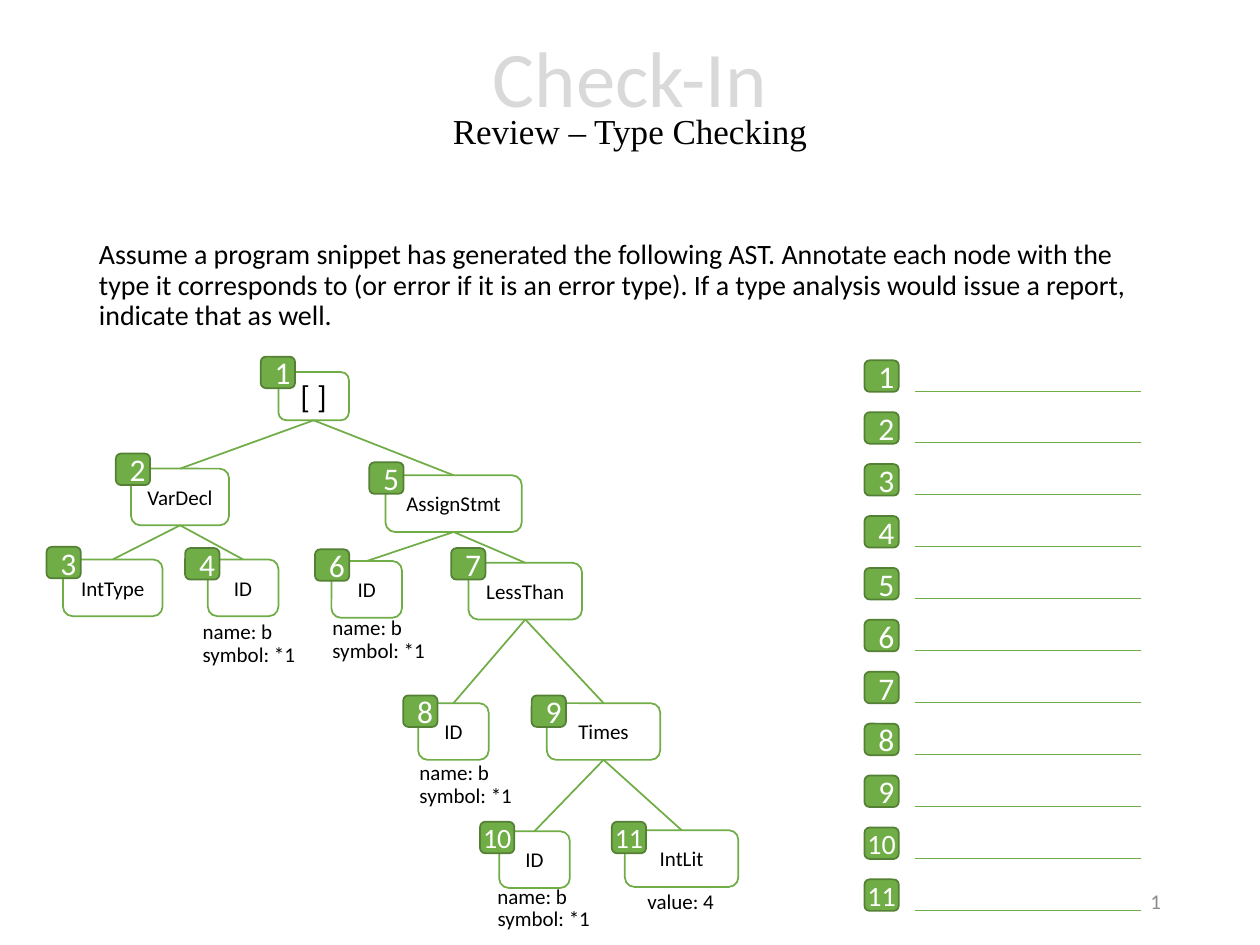
"""Build the type-checking check-in slide: a numbered AST and its answer list."""
from pptx import Presentation
from pptx.dml.color import RGBColor
from pptx.enum.shapes import MSO_CONNECTOR, MSO_SHAPE
from pptx.enum.text import MSO_ANCHOR, MSO_AUTO_SIZE, PP_ALIGN
from pptx.oxml.ns import qn
from pptx.util import Pt
from lxml.etree import SubElement

GREEN, DARK_GREEN = "70AD47", "538035"
NODES = {
    1: ("[ ]", 159.1, 212.6, 40.3, 27.6, 149, 203.8),
    2: ("VarDecl", 74.9, 267.8, 56, 32.4, 66.2, 259.2),
    3: ("IntType", 36, 319.7, 56.9, 32.4, 26.6, 312.5),
    4: ("ID", 118.8, 319.7, 40.3, 32.4, 105.8, 313.2),
    5: ("AssignStmt", 220.3, 271.6, 77.8, 32.4, 211, 264.2),
    6: ("ID", 189.4, 320.6, 40.3, 32.4, 180, 313.9),
    7: ("LessThan", 267.8, 321.6, 64.8, 32.4, 257.8, 313.2),
    8: ("ID", 239, 401.8, 40.3, 32.4, 230.4, 397.4),
    9: ("Times", 312.5, 401.8, 64.8, 32.4, 303.8, 397.4),
    10: ("ID", 285.3, 475, 40.3, 32.4, 274.3, 469.6),
    11: ("IntLit", 357.1, 474.4, 64.8, 32.4, 349.6, 469.6),
}
EDGES = [(1, 2), (1, 5), (2, 3), (2, 4), (5, 6), (5, 7),
         (7, 8), (7, 9), (9, 10), (9, 11)]
ID_NOTES = [(108.7, 349.9), (182.9, 347.8), (232.6, 430.6), (277.2, 501.1)]


def color(hex_value):
    return RGBColor.from_string(hex_value)


def write(tf, text, size=12, fill="000000", font="Calibri", align=PP_ALIGN.LEFT,
          anchor=MSO_ANCHOR.TOP, wrap=True, spacing=None):
    tf.word_wrap = wrap
    tf.auto_size = MSO_AUTO_SIZE.NONE if wrap else MSO_AUTO_SIZE.SHAPE_TO_FIT_TEXT
    tf.vertical_anchor = anchor
    p = tf.paragraphs[0]
    p.alignment = align
    p.line_spacing = spacing
    r = p.add_run()
    r.text = text
    r.font.size, r.font.name = Pt(size), font
    r.font.color.rgb = color(fill)


prs = Presentation()
prs.slide_width, prs.slide_height = Pt(720), Pt(540)
s = prs.slides.add_slide(prs.slide_layouts[5])

title = s.shapes.title
title.left, title.top, title.width, title.height = Pt(49.5), Pt(6.5), Pt(621), Pt(104.4)
centred = {"align": PP_ALIGN.CENTER, "anchor": MSO_ANCHOR.MIDDLE}
write(title.text_frame, "Check-In", size=45, fill="D9D9D9", spacing=0.7, **centred)
title.text_frame.paragraphs[0].add_line_break()
write(title.text_frame, "Review – Type Checking", size=20,
      font="Times New Roman", spacing=0.7, **centred)

sp = s.shapes.add_textbox(Pt(49.5), Pt(134), Pt(621), Pt(205))
write(sp.text_frame, "Assume a program snippet has generated the following AST. "
      "Annotate each node with the type it corresponds to (or error if it is an "
      "error type). If a type analysis would issue a report, indicate that as well.",
      size=16, spacing=0.9)

sp = s.shapes.add_textbox(Pt(508.5), Pt(500.5), Pt(162), Pt(28.8))
write(sp.text_frame, "1", fill="8C8C8C", align=PP_ALIGN.RIGHT, anchor=MSO_ANCHOR.MIDDLE)

boxes = [(label, x, y, w, h, "FFFFFF", GREEN, "000000", 18 if n == 1 else 12)
         for n, (label, x, y, w, h, *_) in NODES.items()]
badge_spots = [(n, *node[5:]) for n, node in NODES.items()]
badge_spots += [(n, 494, 205.9 + 29.66 * (n - 1)) for n in NODES]
boxes += [(str(n), x, y, 19.6, 18, GREEN, DARK_GREEN, "FFFFFF", 16 if n > 9 else 18)
          for n, x, y in badge_spots]

drawn = []
for text, x, y, w, h, fill, line, ink, size in boxes:
    sp = s.shapes.add_shape(MSO_SHAPE.ROUNDED_RECTANGLE, Pt(x), Pt(y), Pt(w), Pt(h))
    sp.shadow.inherit = False
    sp.fill.solid()
    sp.fill.fore_color.rgb = color(fill)
    sp.line.color.rgb = color(line)
    sp.line.width = Pt(1)
    if size == 16:
        sp.text_frame.margin_left = sp.text_frame.margin_right = 0
    write(sp.text_frame, text, size=size, fill=ink, **centred)
    drawn.append(sp)
nodes = dict(zip(NODES, drawn))

lines = []
for parent, child in EDGES:
    cn = s.shapes.add_connector(MSO_CONNECTOR.STRAIGHT, 0, 0, 0, 0)
    cn.begin_connect(nodes[parent], 2)
    cn.end_connect(nodes[child], 0)
    drawn[len(NODES)].element.addprevious(cn.element)
    lines.append((cn, 1))
for i in range(len(NODES)):
    y = Pt(223.4 + 29.66 * i)
    cn = s.shapes.add_connector(MSO_CONNECTOR.STRAIGHT, Pt(522.7), y, Pt(652.3), y)
    lines.append((cn, 0.5))
for cn, width in lines:
    cn.line.color.rgb = color(GREEN)
    cn.line.width = Pt(width)
    SubElement(cn.element.spPr, qn("a:effectLst"))

notes = [("value: 4", 362.9, 504, 53.3)]
for x, y in ID_NOTES:
    notes += [("name: b", x, y, 55.4), ("symbol: *1", x, y + 13, 68.4)]
for text, x, y, w in notes:
    sp = s.shapes.add_textbox(Pt(x), Pt(y), Pt(w), Pt(21.6))
    write(sp.text_frame, text, wrap=False)

prs.save("out.pptx")
